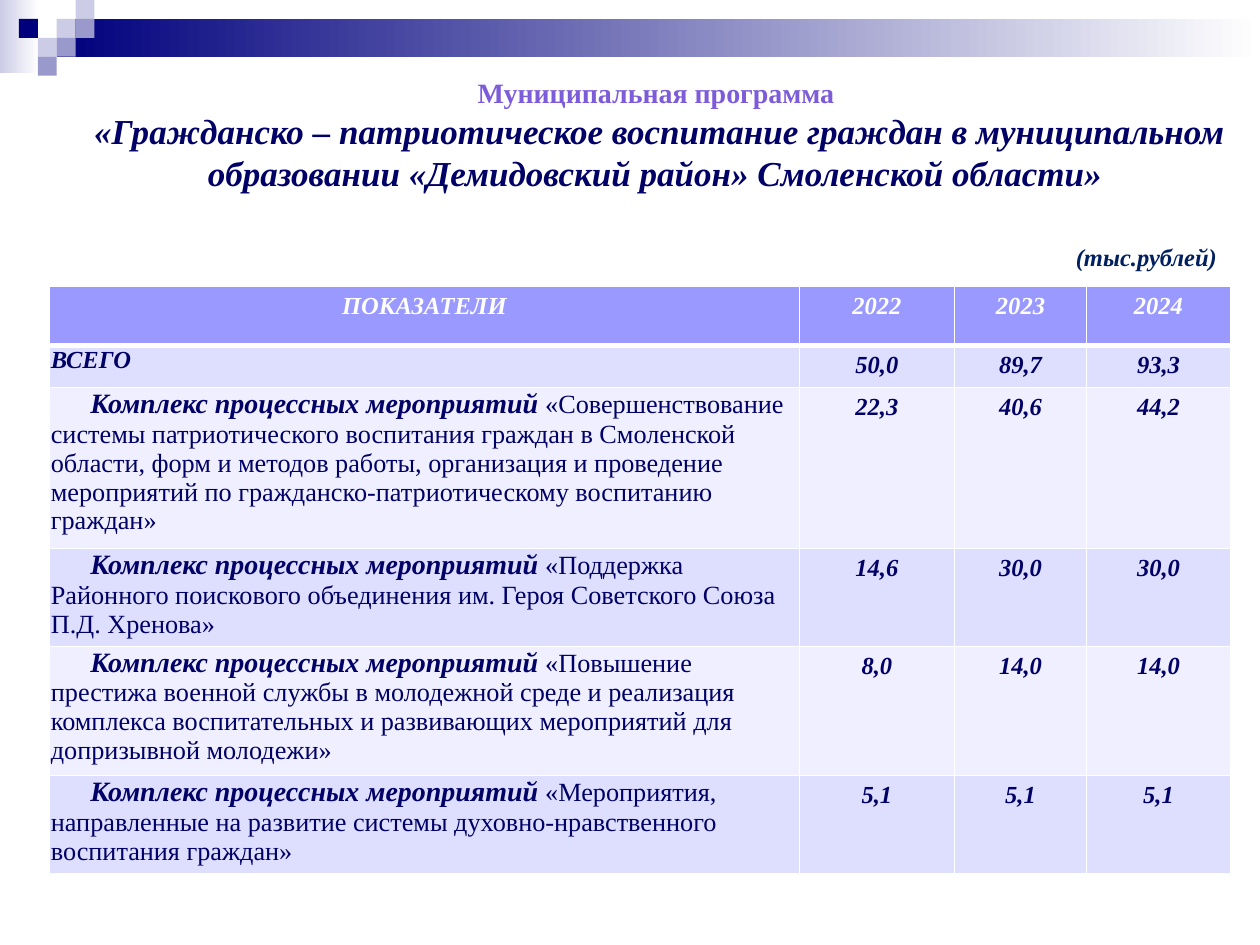
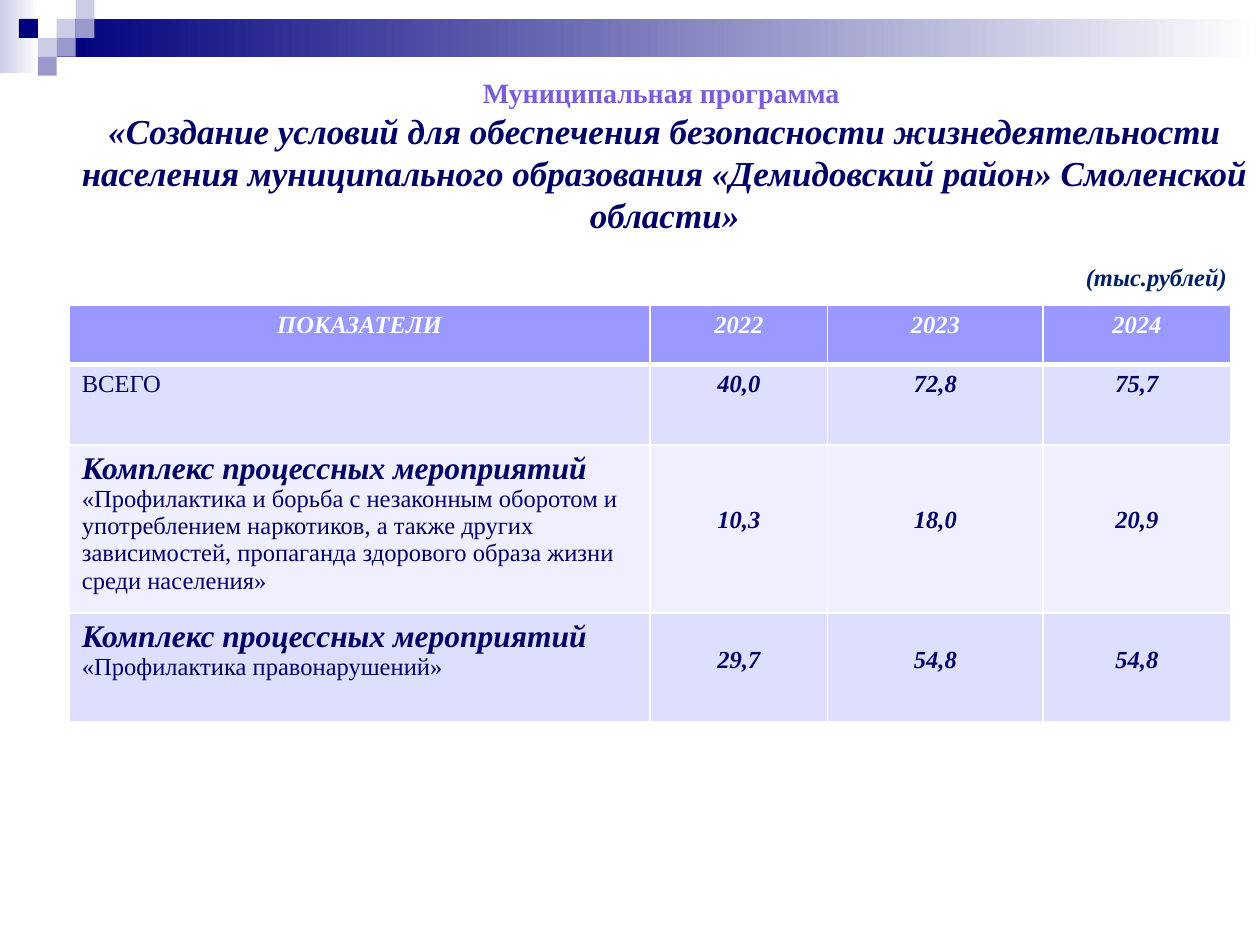
from dataclasses import dataclass

from lxml.etree import SubElement as Sub
from pptx import Presentation
from pptx.dml.color import RGBColor as Rgb
from pptx.enum.shapes import MSO_SHAPE as Kind
from pptx.enum.text import MSO_AUTO_SIZE as Fit, PP_ALIGN as Align
from pptx.oxml.ns import qn
from pptx.util import Pt


@dataclass(frozen=True)
class Theme:
    font: str = "Times New Roman"
    navy: str = "00007D"
    lilac: str = "CCCCE6"
    mauve: str = "9999CC"
    white: str = "FFFFFF"
    ink: str = "000066"
    accent: str = "7D5CDA"
    unit: str = "002060"
    head: str = "9999FF"
    bands: tuple = ("DEDEFF", "EFEFFF")
    kicker: float = 16
    title: float = 20
    text: float = 14


T = Theme()
LEAD = "Комплекс процессных мероприятий "
HEADS = ("ПОКАЗАТЕЛИ", "2022", "2023", "2024")


def add_run(para, text, size, color, bold=True, slant=True):
    run = para.add_run()
    run.text = text
    font = run.font
    font.name, font.size = T.font, Pt(size)
    font.bold, font.italic = bold, slant
    font.color.rgb = Rgb.from_string(color)


def add_rect(slide, box, *colors):
    """Fill with one colour, or fade from the first to the second."""
    rect = slide.shapes.add_shape(Kind.RECTANGLE, *map(Pt, box))
    rect.shadow.inherit = False
    rect.line.fill.background()
    if len(colors) == 1:
        rect.fill.solid()
        rect.fill.fore_color.rgb = Rgb.from_string(colors[0])
        return
    rect.fill.gradient()
    rect.fill.gradient_angle = 0
    for stop, color in zip(rect.fill.gradient_stops, colors):
        stop.color.rgb = Rgb.from_string(color)


def add_band(slide, left, top, wide):
    """Fading bars with a checker of small squares."""
    unit = 10.8
    add_rect(slide, (left, top, 22.3, 41.8), T.lilac, T.white)
    start = 3 * unit
    add_rect(slide, (left + start, top + unit, wide - start, 2 * unit),
             T.navy, T.white)
    squares = ((3, 1, T.lilac), (4, 0, T.lilac), (4, 1, T.mauve),
               (2, 2, T.lilac), (1, 1, T.navy), (3, 2, T.mauve),
               (2, 3, T.mauve))
    for col, row, color in squares:
        add_rect(slide, (left + col * unit, top + row * unit, unit, unit),
                 color)


def add_box(slide, box, wrap):
    frame = slide.shapes.add_textbox(*map(Pt, box)).text_frame
    frame.word_wrap = wrap
    frame.auto_size = Fit.SHAPE_TO_FIT_TEXT
    return frame


def add_title(slide, box, name):
    frame = add_box(slide, box, True)
    first, second = frame.paragraphs[0], frame.add_paragraph()
    first.alignment = second.alignment = Align.CENTER
    add_run(first, "Муниципальная программа ", T.kicker, T.accent, slant=False)
    add_run(second, name, T.title, T.ink)


def add_unit(slide, left, top):
    frame = add_box(slide, (left, top, 95.8, 24.2), False)
    add_run(frame.paragraphs[0], "(тыс.рублей)", T.text, T.unit)


def paint(cell, color, above, below):
    """Fill a cell and rule its four sides in white."""
    cell.fill.solid()
    cell.fill.fore_color.rgb = Rgb.from_string(color)
    props = cell._tc.get_or_add_tcPr()
    sides = (("L", 1), ("R", 1), ("T", above), ("B", below))
    for spot, (side, width) in enumerate(sides):
        line = Sub(props, qn("a:ln" + side), w=str(Pt(width)))
        solid = Sub(line, qn("a:solidFill"))
        Sub(solid, qn("a:srgbClr"), val=T.white)
        props.insert(spot, line)


def add_grid(slide, left, top, cols, rows, items, tight=False, drops=None):
    """Each item is a list of runs (text, size, strong) and its values.

    tight trims the label margins; drops lowers the values, row by row.
    """
    grid = slide.shapes.add_table(
        len(rows), len(cols), Pt(left), Pt(top),
        Pt(sum(cols)), Pt(sum(rows))).table
    grid.first_row = grid.horz_banding = False
    for col, width in zip(grid.columns, cols):
        col.width = Pt(width)
    for row, height in zip(grid.rows, rows):
        row.height = Pt(height)

    # Header row
    for col, head in enumerate(HEADS):
        cell = grid.cell(0, col)
        para = cell.text_frame.paragraphs[0]
        para.alignment = Align.CENTER
        add_run(para, head, T.text, T.white)
        paint(cell, T.head, 1, 3)

    # Body rows
    for row, (runs, values) in enumerate(items, 1):
        color = T.bands[(row - 1) % 2]
        above = 3 if row == 1 else 1
        label = grid.cell(row, 0)
        para = label.text_frame.paragraphs[0]
        for text, size, strong in runs:
            add_run(para, text, size, T.ink, strong, strong)
        if tight:
            label.margin_left = label.margin_right = Pt(0.7)
            label.margin_top, label.margin_bottom = Pt(0.7), 0
            if len(runs) > 1:
                para._p.get_or_add_pPr().set("indent", str(Pt(22.5)))
        paint(label, color, above, 1)
        for col, value in enumerate(values.split(), 1):
            cell = grid.cell(row, col)
            para = cell.text_frame.paragraphs[0]
            para.alignment = Align.CENTER
            add_run(para, value, T.text, T.ink)
            if drops:
                cell.margin_top = Pt(3.6 + drops[row - 1])
            paint(cell, color, above, 1)


def add_page(deck, name, title_box, unit_at):
    slide = deck.slides.add_slide(deck.slide_layouts[6])
    add_band(slide, 0, 0, 720)
    add_title(slide, title_box, name)
    add_unit(slide, *unit_at)
    return slide


def task(text, lead, size):
    return [(LEAD, lead, True), (text, size, False)]


def add_youth(deck):
    slide = add_page(
        deck,
        "«Гражданско – патриотическое воспитание граждан в муниципальном "
        "образовании «Демидовский район» Смоленской области» ",
        (33.8, 39.6, 686.2, 74.9), (607.7, 134.6))
    tasks = (
        ("«Совершенствование системы патриотического воспитания граждан в "
         "Смоленской области, форм и методов работы, организация и проведение "
         "мероприятий по гражданско-патриотическому воспитанию граждан»",
         "22,3 40,6 44,2"),
        ("«Поддержка Районного поискового объединения им. Героя Советского "
         "Союза П.Д. Хренова»", "14,6 30,0 30,0"),
        ("«Повышение престижа военной службы в молодежной среде и реализация "
         "комплекса воспитательных и развивающих мероприятий для допризывной "
         "молодежи»", "8,0 14,0 14,0"),
        ("«Мероприятия, направленные на развитие системы духовно-нравственного "
         "воспитания граждан»", "5,1 5,1 5,1"))
    items = [([("ВСЕГО", T.text, True)], "50,0 89,7 93,3")]
    items += [(task(text, 16, 15), values) for text, values in tasks]
    add_grid(slide, 28.4, 163.4, (428.4, 88.6, 75.6, 82.1),
             (34, 24, 92, 55.7, 74, 56), items, tight=True)


def add_safety(deck):
    slide = add_page(
        deck,
        "«Создание условий для обеспечения безопасности жизнедеятельности "
        "населения муниципального образования «Демидовский район» "
        "Смоленской области»",
        (39.6, 39.6, 680.4, 99.4), (613.4, 146.2))
    items = (
        ([("ВСЕГО", T.text, False)], "40,0 72,8 75,7"),
        (task("«Профилактика и борьба с незаконным оборотом и употреблением "
              "наркотиков, а также других зависимостей, пропаганда здорового "
              "образа жизни среди населения»", 18, T.text), "10,3 18,0 20,9"),
        (task("«Профилактика правонарушений»", 18, T.text), "29,7 54,8 54,8"))
    add_grid(slide, 39.6, 174.4, (331.9, 101.5, 123.1, 107.3),
             (33.8, 46, 96, 62.4), items, drops=(0, 32, 16))


def main():
    deck = Presentation()
    deck.slide_width, deck.slide_height = Pt(720), Pt(540)
    add_youth(deck)
    add_safety(deck)
    deck.save("out.pptx")


if __name__ == "__main__":
    main()
